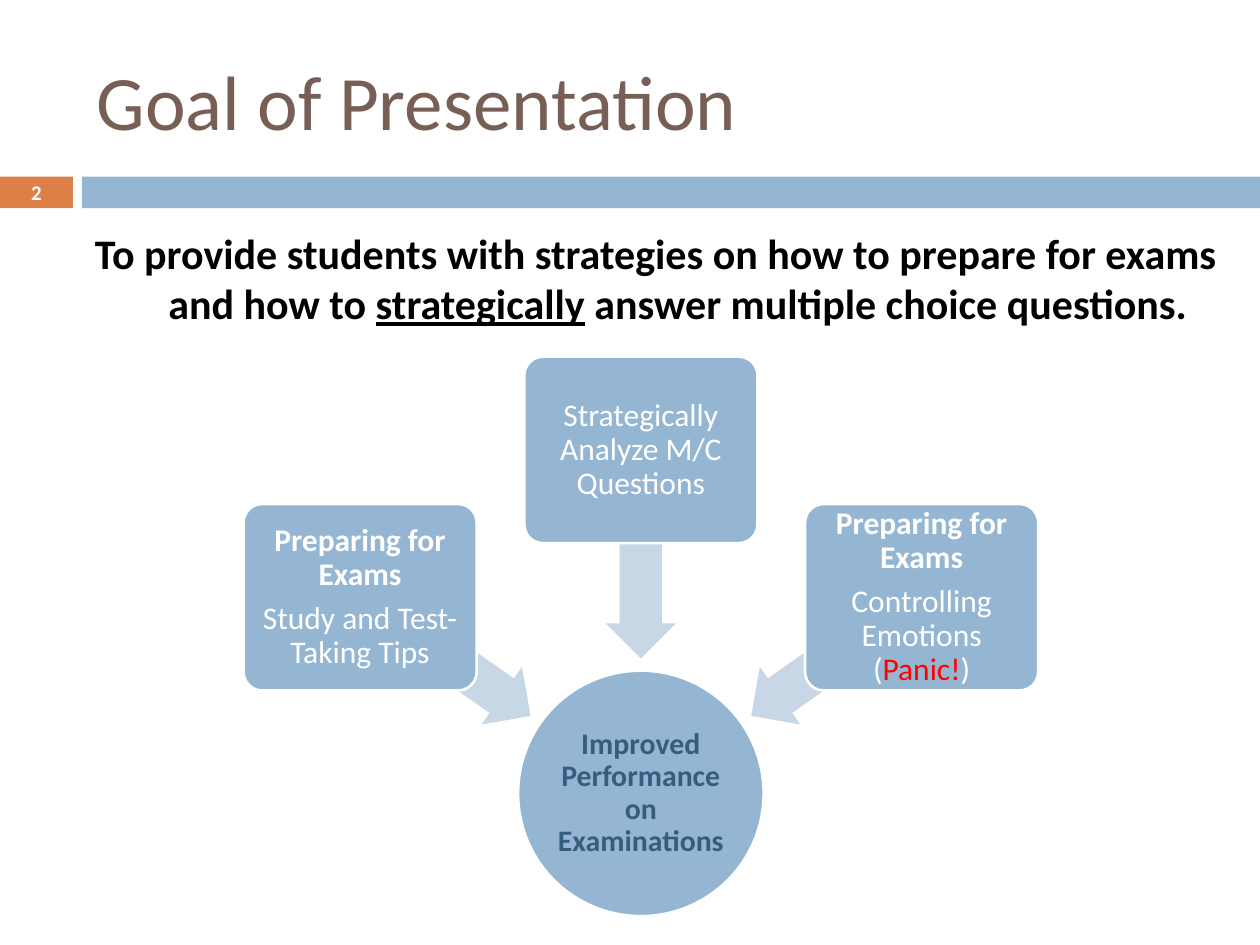
from dataclasses import dataclass

from pptx import Presentation
from pptx import util as u
from pptx.dml.color import RGBColor
from pptx.enum import shapes, text


@dataclass(frozen=True)
class Theme:
    font: str = "Calibri"
    blue: str = "94B6D2"
    pale_blue: str = "C8D7E5"
    dark_blue: str = "355D7E"
    orange: str = "DD8047"
    brown: str = "775F55"
    white: str = "FFFFFF"
    black: str = "000000"
    red: str = "FF0000"
    title_size: float = 44
    body_size: float = 24
    card_size: float = 18
    circle_size: float = 17
    number_size: float = 11.9


class SlideBuilder:
    def __init__(self, slide, theme):
        self.slide = slide
        self.theme = theme

    def format_run(self, run, size, color, bold=False, underline=False):
        run.font.name = self.theme.font
        run.font.size = u.Pt(size)
        run.font.color.rgb = RGBColor.from_string(color)
        run.font.bold = bold
        run.font.underline = underline

    def set_frame(self, frame, margin_x, margin_y, anchor):
        frame.word_wrap = True
        frame.auto_size = text.MSO_AUTO_SIZE.NONE
        frame.vertical_anchor = anchor
        frame.margin_left = frame.margin_right = u.Cm(margin_x)
        frame.margin_top = frame.margin_bottom = u.Cm(margin_y)

    def title(self, words, left, top, width, height):
        title = self.slide.shapes.title
        title.left, title.top = u.Cm(left), u.Cm(top)
        title.width, title.height = u.Cm(width), u.Cm(height)
        frame = title.text_frame
        self.set_frame(frame, 0.25, 0.13, text.MSO_ANCHOR.MIDDLE)
        frame.text = words
        paragraph = frame.paragraphs[0]
        paragraph.alignment = text.PP_ALIGN.LEFT
        self.format_run(paragraph.runs[0], self.theme.title_size, self.theme.brown)

    def statement(self, parts, left, top, width, height):
        box = self.slide.shapes.add_textbox(u.Cm(left), u.Cm(top), u.Cm(width), u.Cm(height))
        self.set_frame(box.text_frame, 0.25, 0.13, text.MSO_ANCHOR.TOP)
        paragraph = box.text_frame.paragraphs[0]
        paragraph.alignment = text.PP_ALIGN.CENTER
        paragraph.space_before = u.Pt(7)
        properties = paragraph._p.get_or_add_pPr()
        properties.set("marL", str(u.Cm(0.89)))
        properties.set("indent", str(u.Cm(-0.89)))
        for words, underline in parts:
            run = paragraph.add_run()
            run.text = words
            self.format_run(run, self.theme.body_size, self.theme.black, True, underline)

    def block(self, kind, left, top, width, height, fill, outlined=False):
        shape = self.slide.shapes.add_shape(
            kind, u.Cm(left), u.Cm(top), u.Cm(width), u.Cm(height))
        shape.shadow.inherit = False
        shape.fill.solid()
        shape.fill.fore_color.rgb = RGBColor.from_string(fill)
        if outlined:
            shape.line.color.rgb = RGBColor.from_string(self.theme.white)
            shape.line.width = u.Pt(1.5)
        else:
            shape.line.fill.background()
        return shape

    def label(self, shape, paragraphs, size, margin):
        frame = shape.text_frame
        self.set_frame(frame, margin, margin, text.MSO_ANCHOR.MIDDLE)
        for index, parts in enumerate(paragraphs):
            paragraph = frame.add_paragraph() if index else frame.paragraphs[0]
            paragraph.alignment = text.PP_ALIGN.CENTER
            paragraph.line_spacing = 0.9
            paragraph.space_after = u.Pt(6)
            for words, color, bold in parts:
                run = paragraph.add_run()
                run.text = words
                self.format_run(run, size, color, bold)

    def card(self, center_x, top, paragraphs):
        width, height = 4.7, 3.76
        shape = self.block(shapes.MSO_SHAPE.ROUNDED_RECTANGLE, center_x - width / 2, top,
                           width, height, self.theme.blue, True)
        shape.adjustments[0] = 0.1
        self.label(shape, paragraphs, self.theme.card_size, 0.22)

    def arrow(self, center_x, center_y, rotation):
        width, height = 4.19, 1.42
        shape = self.block(shapes.MSO_SHAPE.LEFT_ARROW, center_x - width / 2,
                           center_y - height / 2, width, height, self.theme.pale_blue)
        shape.adjustments[0] = 0.6
        shape.adjustments[1] = 0.5
        shape.rotation = rotation

    def circle(self, center_x, top, diameter, words):
        shape = self.block(shapes.MSO_SHAPE.OVAL, center_x - diameter / 2, top,
                           diameter, diameter, self.theme.blue, True)
        self.label(shape, [[(words, self.theme.dark_blue, True)]],
                   self.theme.circle_size, 0.03)

    def header_band(self, number):
        top, height = 3.56, 0.64
        rectangle = shapes.MSO_SHAPE.RECTANGLE
        tab = self.block(rectangle, 0, top, 1.47, height, self.theme.orange)
        self.block(rectangle, 1.65, top, 23.75, height, self.theme.blue)
        self.set_frame(tab.text_frame, 0, 0, text.MSO_ANCHOR.MIDDLE)
        tab.text_frame.text = number
        paragraph = tab.text_frame.paragraphs[0]
        paragraph.alignment = text.PP_ALIGN.CENTER
        self.format_run(paragraph.runs[0], self.theme.number_size, self.theme.white, True)


def main():
    presentation = Presentation()
    presentation.slide_width, presentation.slide_height = u.Cm(25.4), u.Cm(19.05)
    theme = Theme()
    slide = presentation.slides.add_slide(presentation.slide_layouts[5])
    builder = SlideBuilder(slide, theme)

    builder.header_band("2")
    builder.title("Goal of Presentation", 1.7, 0.64, 22.66, 2.74)
    builder.statement([
        ("To provide students with strategies on how to prepare for exams and how to ", False),
        ("strategically", True),
        (" answer multiple choice questions.", False),
    ], 1.47, 4.45, 23.5, 2.6)

    center_x, card_step, arrow_step = 12.92, 5.66, 3.94
    side_top, middle_top = 10.16, 7.19
    side_arrow_y, middle_arrow_y = 13.23, 11.18
    heading = [("Preparing for Exams", theme.white, True)]
    branches = [
        (-1, side_top, side_arrow_y, 215,
         [heading, [("Study and Test-Taking Tips", theme.white, False)]]),
        (0, middle_top, middle_arrow_y, 270,
         [[("Strategically Analyze M/C Questions", theme.white, False)]]),
        (1, side_top, side_arrow_y, 325,
         [heading, [("Controlling Emotions (", theme.white, False),
                    ("Panic!", theme.red, False),
                    (")", theme.white, False)]]),
    ]
    builder.circle(center_x, 13.52, 4.95, "Improved Performance on Examinations")
    for side, card_top, arrow_y, rotation, paragraphs in branches:
        builder.arrow(center_x + side * arrow_step, arrow_y, rotation)
        builder.card(center_x + side * card_step, card_top, paragraphs)

    presentation.save("out.pptx")


if __name__ == "__main__":
    main()
